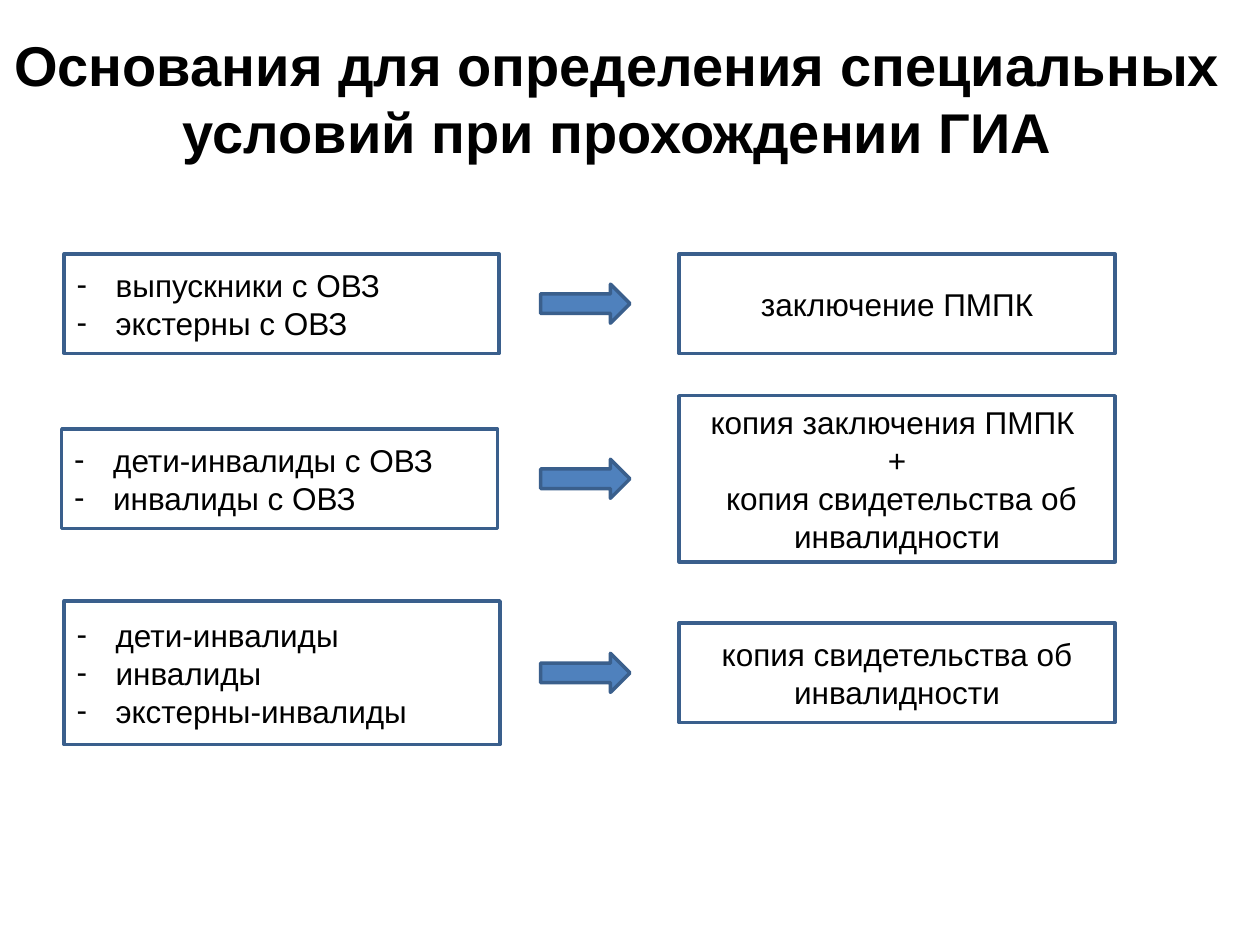
from lxml.etree import SubElement
from pptx import Presentation
from pptx.dml.color import RGBColor
from pptx.enum.shapes import MSO_SHAPE
from pptx.enum.text import MSO_ANCHOR, PP_ALIGN
from pptx.oxml.ns import qn
from pptx.util import Inches, Pt

BLACK = RGBColor(0x00, 0x00, 0x00)
WHITE = RGBColor(0xFF, 0xFF, 0xFF)
BLUE = RGBColor(0x4F, 0x81, 0xBD)
EDGE = RGBColor(0x3A, 0x5F, 0x8C)

ROWS = [
    (2.41, (0.51, 3.45, 0.79), ["выпускники с ОВЗ", "экстерны с ОВЗ"],
     0.79, ["заключение ПМПК"]),
    (3.8, (0.49, 3.46, 0.79), ["дети-инвалиды с ОВЗ", "инвалиды с ОВЗ"],
     1.32, ["копия заключения ПМПК ", "+", " копия свидетельства об инвалидности"]),
    (5.34, (0.51, 3.46, 1.14), ["дети-инвалиды", "инвалиды", "экстерны-инвалиды"],
     0.79, ["копия свидетельства об инвалидности"]),
]


def add_dash(para):
    """Give a paragraph a hanging dash bullet."""
    props = para._p.get_or_add_pPr()
    props.set("marL", str(Inches(0.31)))
    props.set("indent", str(Inches(-0.31)))
    SubElement(props, qn("a:buFont"), typeface="Arial")
    SubElement(props, qn("a:buChar"), char="-")


def write(shape, lines, size, bold=False, dash=False):
    """Fill a shape with lines, centred or dashed."""
    frame = shape.text_frame
    frame.word_wrap = True
    frame.vertical_anchor = MSO_ANCHOR.MIDDLE
    for i, line in enumerate(lines):
        para = frame.add_paragraph() if i else frame.paragraphs[0]
        para.alignment = PP_ALIGN.LEFT if dash else PP_ALIGN.CENTER
        if dash:
            add_dash(para)
        run = para.add_run()
        run.text = line
        run.font.name = "Arial"
        run.font.size = Pt(size)
        run.font.bold = bold
        run.font.color.rgb = BLACK


def add_form(slide, kind, left, mid, width, height, fill):
    """Draw an outlined shape centred on the height mid."""
    shape = slide.shapes.add_shape(kind, Inches(left), Inches(mid - height / 2),
                                   Inches(width), Inches(height))
    shape.shadow.inherit = False
    shape.fill.solid()
    shape.fill.fore_color.rgb = fill
    shape.line.color.rgb = EDGE
    shape.line.width = Pt(2)
    return shape


def add_title(slide, left, top, width, height):
    """Place the heading in its box."""
    box = slide.shapes.add_textbox(Inches(left), Inches(top), Inches(width), Inches(height))
    write(box, ["Основания для определения специальных условий при прохождении ГИА"],
          32, bold=True)


def add_row(slide, mid, group, people, tall, papers):
    """Place a group, an arrow and the papers it needs along one axis."""
    left, width, height = group
    who = add_form(slide, MSO_SHAPE.RECTANGLE, left, mid, width, height, WHITE)
    write(who, people, 18, dash=True)
    add_form(slide, MSO_SHAPE.RIGHT_ARROW, 4.29, mid, 0.71, 0.31, BLUE)
    proof = add_form(slide, MSO_SHAPE.RECTANGLE, 5.39, mid, 3.46, tall, WHITE)
    write(proof, papers, 18)


def main():
    """Build and save the slide."""
    deck = Presentation()
    deck.slide_width = Inches(10)
    deck.slide_height = Inches(7.5)
    slide = deck.slides.add_slide(deck.slide_layouts[6])
    add_title(slide, 0, 0, 9.8, 1.55)
    for row in ROWS:
        add_row(slide, *row)
    deck.save("out.pptx")


if __name__ == "__main__":
    main()
